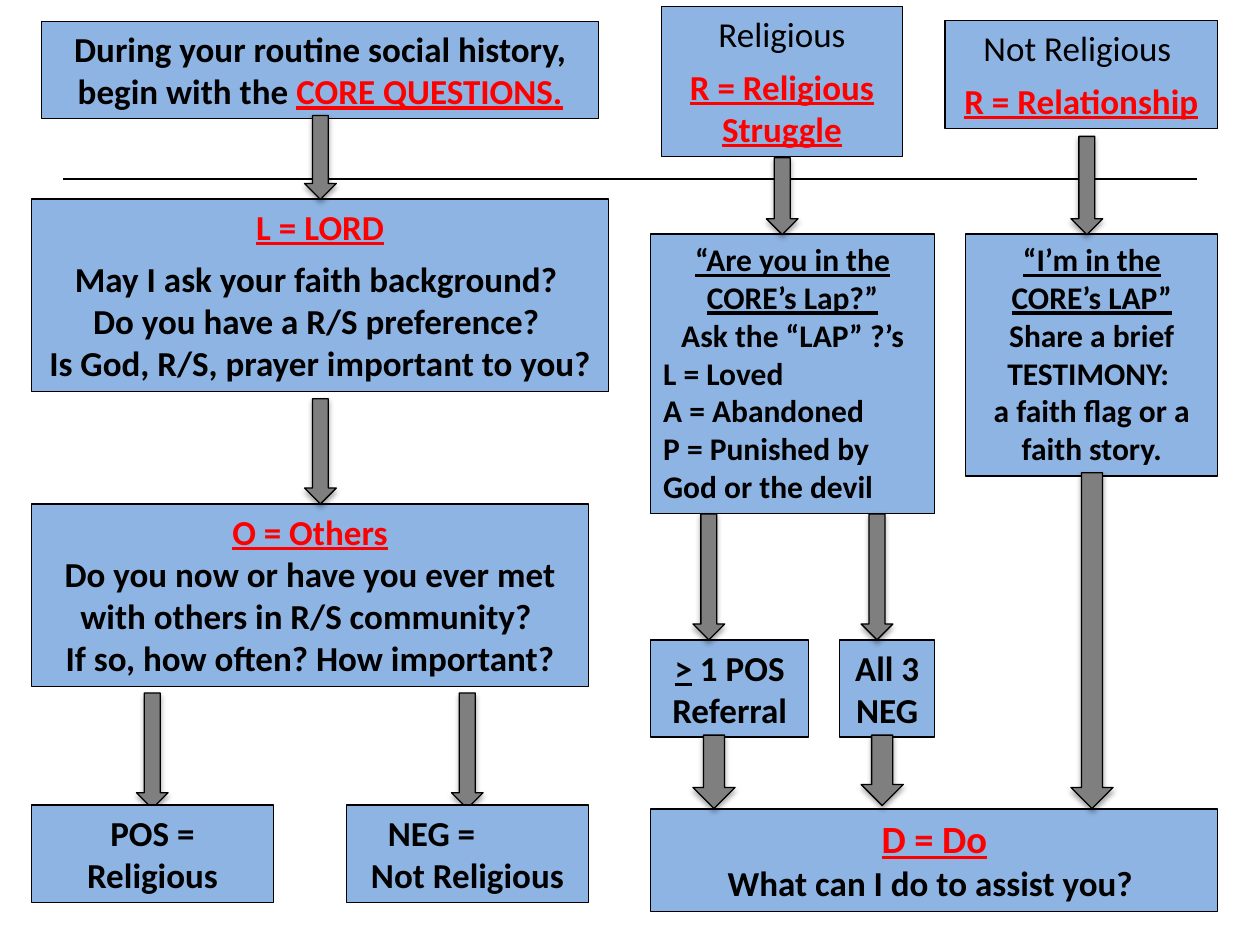
from dataclasses import dataclass

from lxml import etree
from pptx import Presentation
from pptx.dml.color import RGBColor
from pptx.enum.shapes import MSO_CONNECTOR, MSO_SHAPE
from pptx.enum.text import MSO_AUTO_SIZE, PP_ALIGN
from pptx.oxml.ns import qn
from pptx.util import Cm, Pt


@dataclass(frozen=True)
class Theme:
    font: str = "Calibri"
    ink: RGBColor = RGBColor(0, 0, 0)
    key: RGBColor = RGBColor(0xFF, 0, 0)
    box: RGBColor = RGBColor(0x8E, 0xB4, 0xE3)
    arrow: RGBColor = RGBColor(0x7F, 0x7F, 0x7F)
    small: int = 18
    body: int = 20
    large: int = 22
    gap: int = 6
    border: float = 0.75
    rule: float = 1.5


T = Theme()
THIN, THICK = 0.64, 0.85


@dataclass
class Para:
    """A paragraph; runs, when given, are (text, colour, underline) parts."""
    text: str = ""
    color: RGBColor = T.ink
    underline: bool = False
    bold: bool = True
    size: int = T.body
    align: PP_ALIGN = PP_ALIGN.CENTER
    before: int = 0
    after: int = 0
    right: float = 0
    runs: tuple = ()


def heading(text, **kw):
    return Para(text, color=T.key, underline=True, **kw)


def small(text, **kw):
    return Para(text, size=T.small, **kw)


def write(p, para):
    p.alignment = para.align
    p.space_before, p.space_after = Pt(para.before), Pt(para.after)
    p._p.get_or_add_pPr().set("marR", str(Cm(para.right)))
    f = p.font
    f.name, f.size, f.bold = T.font, Pt(para.size), para.bold
    if not para.runs:
        f.underline = para.underline
        f.color.rgb = para.color
        p.add_run().text = para.text
    for text, color, underline in para.runs:
        r = p.add_run()
        r.text = text
        r.font.underline = underline
        r.font.color.rgb = color


def paint(shape, fill):
    shape.fill.solid()
    shape.fill.fore_color.rgb = fill
    shape.line.color.rgb = T.ink
    shape.line.width = Pt(T.border)


class Region:
    """Places boxes and arrows, in cm, relative to its top left corner."""

    def __init__(self, s, left, top):
        self.s, self.left, self.top = s, left, top

    def place(self, x, y, w, h):
        return Cm(self.left + x), Cm(self.top + y), Cm(w), Cm(h)

    def box(self, x, y, w, h, *paras):
        sp = self.s.shapes.add_textbox(*self.place(x, y, w, h))
        paint(sp, T.box)
        tf = sp.text_frame
        tf.word_wrap = True
        tf.auto_size = MSO_AUTO_SIZE.SHAPE_TO_FIT_TEXT
        for i, para in enumerate(paras):
            write(tf.add_paragraph() if i else tf.paragraphs[0], para)

    def arrow(self, x, y, h, w=THIN):
        sp = self.s.shapes.add_shape(MSO_SHAPE.DOWN_ARROW, *self.place(x, y, w, h))
        paint(sp, T.arrow)
        effects = etree.SubElement(sp._element.spPr, qn("a:effectLst"))
        shadow = etree.SubElement(effects, qn("a:outerShdw"), blurRad=str(Pt(3.1)),
                                  dist=str(Pt(1.8)), dir="5400000", rotWithShape="0")
        color = etree.SubElement(shadow, qn("a:srgbClr"), val=str(T.ink))
        etree.SubElement(color, qn("a:alpha"), val="35000")


def draw_rule(s, left, right, y):
    line = s.shapes.add_connector(MSO_CONNECTOR.STRAIGHT, Cm(left), Cm(y), Cm(right), Cm(y))
    line.line.color.rgb = T.ink
    line.line.width = Pt(T.rule)
    etree.SubElement(line._element.spPr, qn("a:effectLst"))


def draw_history(s, left, top):
    """Opening questions, down to the religious / not religious outcome."""
    region = Region(s, left, top)
    region.box(0.2, 0, 11.23, 1.96, Para(runs=(
        ("During your routine social history, begin with the ", T.ink, False),
        ("CORE QUESTIONS.", T.key, True))))
    region.box(0, 3.58, 11.63, 3.89,
               heading("L = LORD", after=T.gap),
               Para("May I ask your faith background? "),
               Para("Do you have a R/S preference? "),
               Para("Is God, R/S, prayer important to you?"))
    region.arrow(5.5, 1.9, 1.69)
    region.box(0, 9.73, 11.22, 3.68,
               heading("O = Others"),
               Para("Do you now or have you ever met with others in R/S community? "),
               Para("If so, how often? How important?"))
    for x in (2.11, 8.46):
        region.arrow(x, 13.54, 2.33)
    region.box(0, 15.8, 4.87, 1.96, Para("POS = Religious"))
    region.box(6.35, 15.8, 4.87, 1.96, Para("NEG =", right=1.45), Para("Not Religious"))
    region.arrow(5.5, 7.61, 2.12)


def draw_pathways(s, left, top):
    """Religious and not religious pathways, both ending in what to do."""
    region = Region(s, left, top)
    region.box(0.21, 0, 4.87, 3.02,
               Para("Religious", bold=False),
               heading("R = Religious Struggle", before=T.gap))
    region.box(5.93, 0.28, 5.5, 2.18,
               Para("Not Religious ", bold=False),
               heading("R = Relationship", before=T.gap))
    region.box(0, 4.59, 5.72, 5.64,
               small("“Are you in the CORE’s Lap?”", underline=True),
               small("Ask the “LAP” ?’s"),
               *(small(text, align=PP_ALIGN.LEFT) for text in
                 ("L = Loved", "A = Abandoned", "P = Punished by God or the devil")))
    region.box(6.35, 4.59, 5.08, 4.88,
               small("“I’m in the CORE’s LAP”", underline=True),
               small("Share a brief TESTIMONY: "),
               small("a faith flag or a faith story."))
    region.box(0, 16.18, 11.43, 2.06,
               heading("D = Do", size=T.large),
               Para("What can I do to assist you? "))
    region.box(0, 12.77, 3.18, 1.96, Para(runs=(
        (">", T.ink, True), (" 1 POS Referral", T.ink, False))))
    region.box(3.81, 12.77, 1.91, 1.96, Para("All 3 NEG"))
    region.arrow(2.33, 3.05, 1.55)
    region.arrow(8.47, 2.62, 1.98)
    for x, h in ((0.85, 1.48), (4.24, 1.42)):
        region.arrow(x, 10.23, 2.54)
        region.arrow(x, 14.69, h, THICK)
    region.arrow(8.47, 9.4, 6.77, THICK)


def main():
    prs = Presentation()
    prs.slide_width, prs.slide_height = Cm(25.4), Cm(19.05)
    s = prs.slides.add_slide(prs.slide_layouts[6])
    draw_rule(s, 1.27, 24.13, 3.61)
    draw_history(s, 0.64, 0.43)
    draw_pathways(s, 13.12, 0.13)
    prs.save("out.pptx")


if __name__ == "__main__":
    main()
